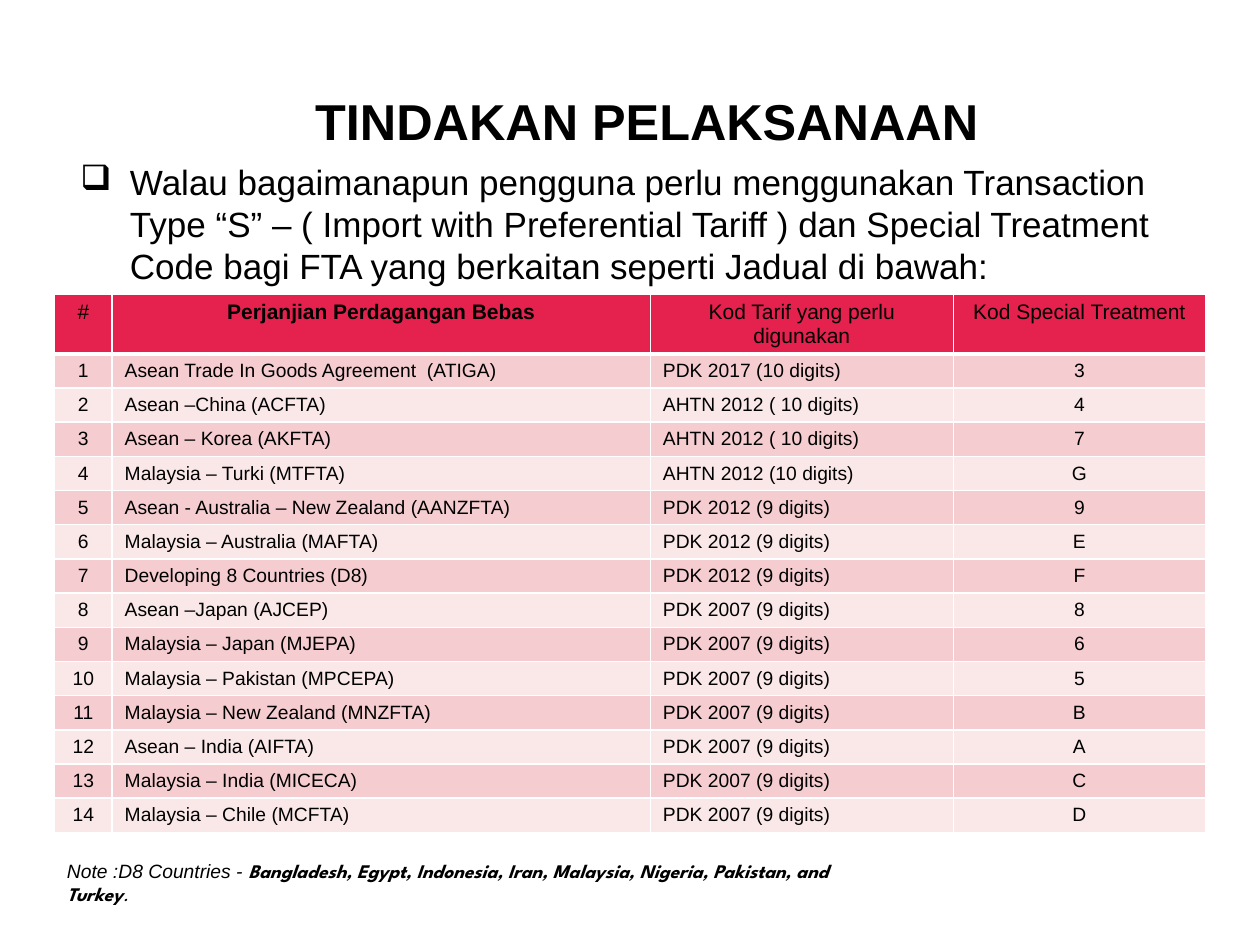
import pptx
import pptx.dml.color
import pptx.enum.text
import pptx.oxml
import pptx.oxml.ns
import pptx.util
from pptx.util import Cm

ALIGN = pptx.enum.text.PP_ALIGN
ANCHOR = pptx.enum.text.MSO_ANCHOR
RGB = pptx.dml.color.RGBColor.from_string

THEME = {
    "font": "Arial", "accent_font": "League Spartan",
    "text": "000000", "border": "FFFFFF", "header": "E5224E",
    "bands": ["F5CDD0", "FAE8E9"],
    "title": 28.8, "body": 20, "head": 12, "cell": 11,
}


def add_run(p, text, size, font=THEME["font"], bold=False, italic=False):
    r = p.add_run()
    r.text = text
    fmt = {"size": pptx.util.Pt(size), "name": font, "bold": bold, "italic": italic}
    for key, value in fmt.items():
        setattr(r.font, key, value)
    r.font.color.rgb = RGB(THEME["text"])


def set_borders(cell, bottom):
    tcPr = cell._tc.get_or_add_tcPr()
    for i, (side, width) in enumerate(zip("LRTB", (1, 1, 1, bottom))):
        tcPr.insert(i, pptx.oxml.parse_xml(
            f'<a:ln{side} {pptx.oxml.ns.nsdecls("a")} w="{width * 12700}"><a:solidFill>'
            f'<a:srgbClr val="{THEME["border"]}"/></a:solidFill></a:ln{side}>'))


prs = pptx.Presentation()
prs.slide_width, prs.slide_height = Cm(25.4), Cm(19.05)
s = prs.slides.add_slide(prs.slide_layouts[5])

# Title
sp = s.shapes.title
for key, value in {"left": 6.1, "top": 1.88, "width": 22.86, "height": 1.24}.items():
    setattr(sp, key, Cm(value))
tf = sp.text_frame
tf.vertical_anchor = ANCHOR.MIDDLE
p = tf.paragraphs[0]
p.alignment = ALIGN.LEFT
p.line_spacing = 0.9
add_run(p, "TINDAKAN PELAKSANAAN", THEME["title"], bold=True)

# Table of agreements
header = ["#", "Perjanjian Perdagangan Bebas", "Kod Tarif yang perlu digunakan",
          "Kod Special Treatment"]
agreements = [
    ("Asean Trade In Goods Agreement  (ATIGA)", "PDK 2017 (10 digits)", "3"),
    ("Asean –China (ACFTA)", "AHTN 2012 ( 10 digits)", "4"),
    ("Asean – Korea (AKFTA)", "AHTN 2012 ( 10 digits)", "7"),
    ("Malaysia – Turki (MTFTA)", "AHTN 2012 (10 digits)", "G"),
    ("Asean - Australia – New Zealand (AANZFTA)", "PDK 2012 (9 digits)", "9"),
    ("Malaysia – Australia (MAFTA)", "PDK 2012 (9 digits)", "E"),
    ("Developing 8 Countries (D8)", "PDK 2012 (9 digits)", "F"),
    ("Asean –Japan (AJCEP)", "PDK 2007 (9 digits)", "8"),
    ("Malaysia – Japan (MJEPA)", "PDK 2007 (9 digits)", "6"),
    ("Malaysia – Pakistan (MPCEPA)", "PDK 2007 (9 digits)", "5"),
    ("Malaysia – New Zealand (MNZFTA)", "PDK 2007 (9 digits)", "B"),
    ("Asean – India (AIFTA)", "PDK 2007 (9 digits)", "A"),
    ("Malaysia – India (MICECA)", "PDK 2007 (9 digits)", "C"),
    ("Malaysia – Chile (MCFTA)", "PDK 2007 (9 digits)", "D"),
]
rows = [header] + [(str(n), *row) for n, row in enumerate(agreements, 1)]
table = s.shapes.add_table(len(rows), len(header), Cm(1.1), Cm(5.93),
                           Cm(23.2), Cm(10.83)).table
table.horz_banding = False
for column, width in zip(table.columns, (1.16, 10.85, 6.11, 5.08)):
    column.width = Cm(width)
for i, row in enumerate(rows):
    is_head = i == 0
    table.rows[i].height = Cm(1.17 if is_head else 0.69)
    for j, text in enumerate(row):
        cell = table.cell(i, j)
        cell.fill.solid()
        cell.fill.fore_color.rgb = RGB(THEME["header"] if is_head else THEME["bands"][(i - 1) % 2])
        set_borders(cell, 3 if is_head else 1)
        p = cell.text_frame.paragraphs[0]
        p.alignment = ALIGN.CENTER if is_head or j in (0, 3) else ALIGN.LEFT
        add_run(p, text, THEME["head" if is_head else "cell"], bold=is_head and j == 1)

# Note under the table
tf = s.shapes.add_textbox(Cm(1.1), Cm(17.2), Cm(16.4), Cm(0.74)).text_frame
tf.word_wrap = True
p = tf.paragraphs[0]
add_run(p, "Note :D8 Countries - ", THEME["cell"], italic=True)
add_run(p, "Bangladesh, Egypt, Indonesia, Iran, Malaysia, Nigeria, Pakistan, and Turkey",
        THEME["cell"], THEME["accent_font"], bold=True, italic=True)
add_run(p, ".", THEME["cell"], THEME["accent_font"], italic=True)

# Bulleted instruction above the table
tf = s.shapes.add_textbox(Cm(1.1), Cm(3.12), Cm(22.4), Cm(2.82)).text_frame
tf.word_wrap = True
p = tf.paragraphs[0]
p.level = 1
pPr = p._p.get_or_add_pPr()
pPr.set("marL", str(Cm(1.27)))
pPr.set("indent", str(-Cm(1)))
pPr.append(pptx.oxml.parse_xml(f'<a:buChar {pptx.oxml.ns.nsdecls("a")} char="❑"/>'))
add_run(p, "Walau bagaimanapun pengguna perlu menggunakan Transaction Type “S” – "
        "( Import with Preferential Tariff ) dan Special Treatment Code bagi FTA "
        "yang berkaitan seperti Jadual di bawah:", THEME["body"])

prs.save("out.pptx")
